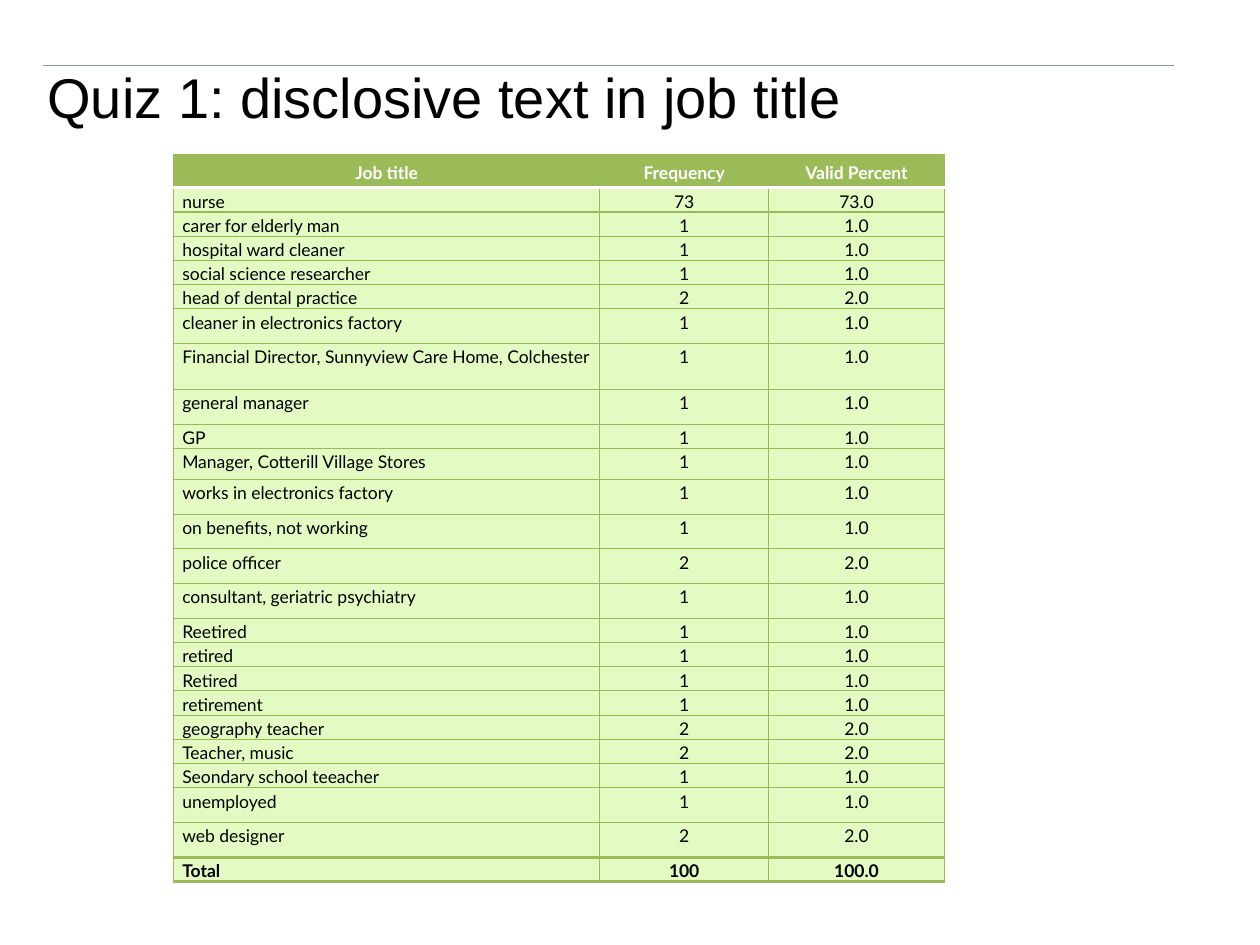
from lxml.etree import SubElement
from pptx import Presentation
from pptx.dml.color import RGBColor
from pptx.enum.shapes import MSO_CONNECTOR as Connector
from pptx.enum.text import MSO_ANCHOR as Anchor, PP_ALIGN as Align
from pptx.oxml import parse_xml
from pptx.oxml.ns import nsdecls, qn
from pptx.util import Pt

TITLE = "Quiz 1: disclosive text in job title"
HEADINGS = ("Job title", "Frequency", "Valid Percent")
HEADING_HEIGHT = 18.9
LOW, MEDIUM, TALL, TALLEST = 13.8, 17.7, 19.85, 26.3
JOBS = [  # job title, frequency, row height
    ("nurse", 73, LOW),
    ("carer for elderly man", 1, LOW),
    ("hospital ward cleaner", 1, LOW),
    ("social science researcher", 1, LOW),
    ("head of dental practice", 2, LOW),
    ("cleaner in electronics factory", 1, TALL),
    ("Financial Director, Sunnyview Care Home, Colchester", 1, TALLEST),
    ("general manager", 1, TALL),
    ("GP", 1, LOW),
    ("Manager, Cotterill Village Stores", 1, MEDIUM),
    ("works in electronics factory", 1, TALL),
    ("on benefits, not working", 1, TALL),
    ("police officer", 2, TALL),
    ("consultant, geriatric psychiatry", 1, TALL),
    ("Reetired", 1, LOW),
    ("retired", 1, LOW),
    ("Retired", 1, LOW),
    ("retirement", 1, LOW),
    ("geography teacher", 2, LOW),
    ("Teacher, music", 2, LOW),
    ("Seondary school teeacher", 1, LOW),
    ("unemployed", 1, TALL),
    ("web designer", 2, TALL),
]
COLUMN_WIDTHS = (243.5, 96.5, 100.5)
COLORS = {
    "text": "000000",
    "heading text": "FFFFFF",
    "heading": "9BBB59",
    "body": "E3FBC2",
    "grid": "98B955",
    "rule": "8E959C",
}


def rgb(name):
    return RGBColor.from_string(COLORS[name])


def set_borders(cell, top, bottom):
    """Draw the four cell borders; top and bottom are (color name, width)."""
    side = ("grid", 0.75)
    properties = cell._tc.get_or_add_tcPr()
    edges = (("lnL", side), ("lnR", side), ("lnT", top), ("lnB", bottom))
    for place, (tag, (color, width)) in enumerate(edges):
        line = parse_xml(
            f'<a:{tag} {nsdecls("a")} w="{Pt(width)}"><a:solidFill>'
            f'<a:srgbClr val="{COLORS[color]}"/></a:solidFill></a:{tag}>')
        properties.insert(place, line)


def fill_cell(cell, words, align, heading, bold):
    cell.fill.solid()
    cell.fill.fore_color.rgb = rgb("heading" if heading else "body")
    cell.margin_left = cell.margin_right = Pt(5)
    cell.margin_top = cell.margin_bottom = 0
    cell.vertical_anchor = Anchor.MIDDLE if heading else Anchor.TOP
    paragraph = cell.text_frame.paragraphs[0]
    paragraph.text = words
    paragraph.alignment = align
    paragraph.line_spacing = 1.15
    font = paragraph.runs[0].font
    font.name, font.size, font.bold = "Lato", Pt(10), bold
    font.color.rgb = rgb("heading text" if heading else "text")


def add_title(slide):
    rule = slide.shapes.add_connector(
        Connector.STRAIGHT, Pt(24.5), Pt(37.4), Pt(671), Pt(37.4))
    rule.line.color.rgb = rgb("rule")
    rule.line.width = Pt(0.75)
    SubElement(rule._element.spPr, qn("a:effectLst"))

    title = slide.shapes.add_textbox(Pt(20), Pt(9.5), Pt(648), Pt(90.5))
    frame = title.text_frame
    frame.word_wrap = True
    frame.vertical_anchor = Anchor.MIDDLE
    frame.text = TITLE
    font = frame.paragraphs[0].runs[0].font
    font.name, font.size = "Arial", Pt(32)
    font.color.rgb = rgb("text")


def add_job_table(slide):
    total = sum(frequency for _, frequency, _ in JOBS)
    counts = JOBS + [("Total", total, LOW)]
    rows = [(HEADINGS, HEADING_HEIGHT)] + [
        ((job, str(frequency), f"{100 * frequency / total:.1f}"), height)
        for job, frequency, height in counts]
    last = len(rows) - 1

    table = slide.shapes.add_table(
        len(rows), len(HEADINGS), Pt(99.2), Pt(88.4),
        Pt(sum(COLUMN_WIDTHS)), Pt(sum(height for _, height in rows))).table
    for column, width in zip(table.columns, COLUMN_WIDTHS):
        column.width = Pt(width)

    thin, under_heading, around_total = ("grid", 0.75), ("heading text", 2), ("heading", 2)
    edges = [thin, under_heading] + [thin] * (last - 2) + [around_total] * 2
    for r, (texts, height) in enumerate(rows):
        table.rows[r].height = Pt(height)
        heading = r == 0
        for c, words in enumerate(texts):
            align = Align.LEFT if c == 0 and not heading else Align.CENTER
            cell = table.cell(r, c)
            fill_cell(cell, words, align, heading, bold=r in (0, last))
            set_borders(cell, edges[r], edges[r + 1])


def main():
    presentation = Presentation()
    presentation.slide_width, presentation.slide_height = Pt(720), Pt(540)
    slide = presentation.slides.add_slide(presentation.slide_layouts[6])
    add_title(slide)
    add_job_table(slide)
    presentation.save("out.pptx")


if __name__ == "__main__":
    main()
